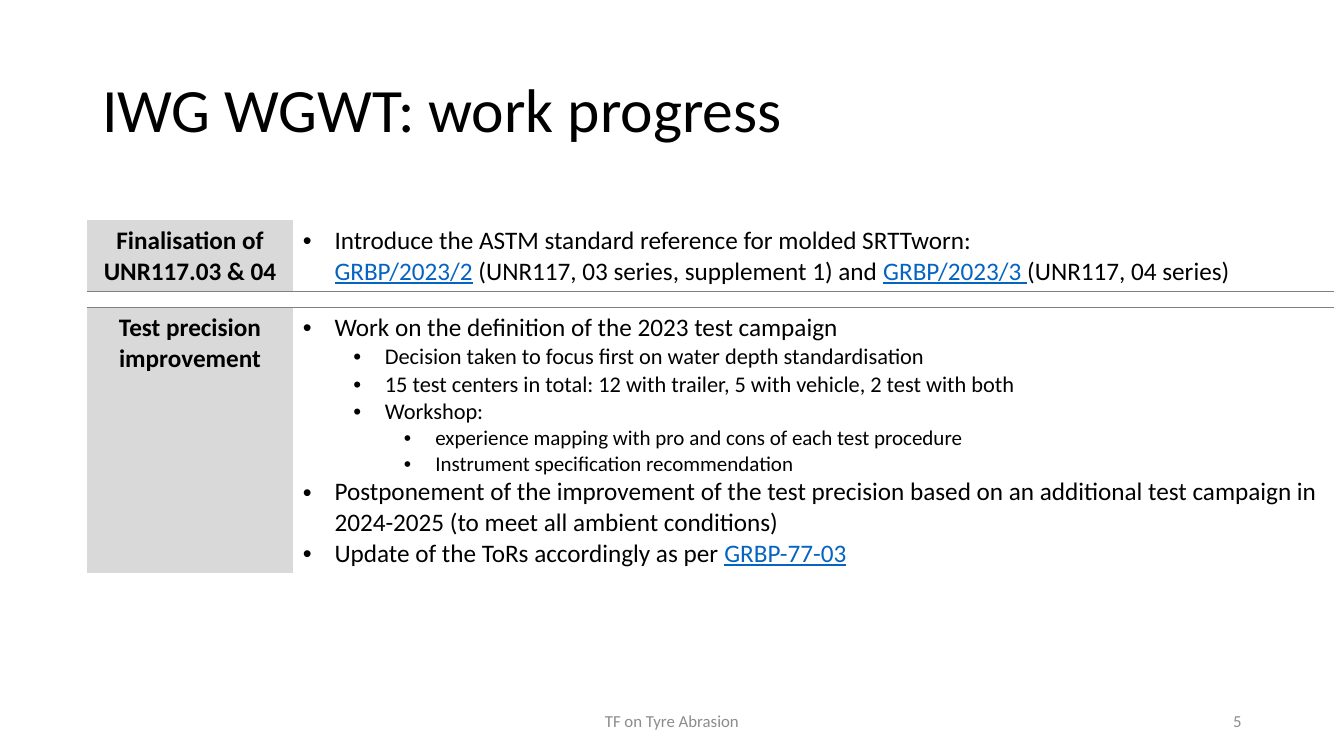
import pptx
import pptx.util
import pptx.dml.color
import pptx.enum.text
import pptx.oxml
import pptx.oxml.ns

FONT = "Calibri"
BLACK, GRAY, LINK = "000000", "8C8C8C", "0563C1"
PANEL, RULE = "D9D9D9", "808080"
ALIGN = pptx.enum.text.PP_ALIGN
MID = pptx.enum.text.MSO_ANCHOR.MIDDLE
PLAIN = "{2D5ABB26-0587-4C30-8999-92F81FD0307C}"
SIZES = [18, 16, 15]
INDENT, STEP = 30, 48

FINAL = [
    (0, ["Introduce the ASTM standard reference for molded SRTTworn: ", "\n",
         ("GRBP/2023/2",), " (UNR117, 03 series, supplement 1) and ",
         ("GRBP/2023/3 ",), "(UNR117, 04 series)"]),
]
TESTS = [
    (0, ["Work on the definition of the 2023 test campaign"]),
    (1, ["Decision taken to focus first on water depth standardisation"]),
    (1, ["15 test centers in total: 12 with trailer, 5 with vehicle, 2 test with both"]),
    (1, ["Workshop:"]),
    (2, ["experience mapping with pro and cons of each test procedure"]),
    (2, ["Instrument specification recommendation"]),
    (0, ["Postponement of the improvement of the test precision based on an "
         "additional test campaign in 2024-2025 (to meet all ambient conditions)"]),
    (0, ["Update of the ToRs accordingly as per ", ("GRBP-77-03",)]),
]


def px(n):
    return pptx.util.Emu(n * 9525)


def color(code):
    return pptx.dml.color.RGBColor.from_string(code)


def node(xml):
    space = pptx.oxml.ns.nsdecls("a")
    return pptx.oxml.parse_xml(xml.replace(" ", f" {space} ", 1))


def write(para, text, size, ink=BLACK, bold=False, line=False):
    run = para.add_run()
    run.text = text
    font = run.font
    font.name = FONT
    font.size = pptx.util.Pt(size)
    font.color.rgb = color(ink)
    font.bold = bold
    font.underline = line


def label(slide, box, text, size, ink, align):
    frame = slide.shapes.add_textbox(*map(px, box)).text_frame
    frame.word_wrap = True
    frame.vertical_anchor = MID
    para = frame.paragraphs[0]
    para.alignment = align
    write(para, text, size, ink)
    return para


def bullet(para, level, parts):
    para.level = level
    props = para._p.get_or_add_pPr()
    props.set("marL", str(px(INDENT + STEP * level)))
    props.set("indent", str(px(-INDENT)))
    props.append(node('<a:buFont typeface="Arial"/>'))
    props.append(node('<a:buChar char="•"/>'))
    for part in parts:
        if part == "\n":
            para.add_line_break()
        elif isinstance(part, tuple):
            write(para, part[0], SIZES[level], LINK, line=True)
        else:
            write(para, part, SIZES[level])


def border(cell, side):
    cell._tc.get_or_add_tcPr().insert(0, node(
        f'<a:{side} w="12700"><a:solidFill><a:srgbClr val="{RULE}"/>'
        f'</a:solidFill></a:{side}>'))


def topic(head, body, name, items):
    head.fill.solid()
    head.fill.fore_color.rgb = color(PANEL)
    para = head.text_frame.paragraphs[0]
    para.alignment = ALIGN.CENTER
    write(para, name, 18, bold=True)
    body.fill.background()
    frame = body.text_frame
    for i, (level, parts) in enumerate(items):
        para = frame.add_paragraph() if i else frame.paragraphs[0]
        bullet(para, level, parts)


def spacer(cell):
    cell.fill.background()
    cell.margin_top = cell.margin_bottom = 0
    cell.text_frame.paragraphs[0]._p.append(node('<a:endParaRPr sz="400"/>'))


def grid(slide):
    cols, rows = [196, 992], [68, 15, 253]
    frame = slide.shapes.add_table(
        3, 2, px(83), px(210), px(sum(cols)), px(sum(rows)))
    table = frame.table
    table.first_row = table.horz_banding = False
    table._tbl.tblPr.find(pptx.oxml.ns.qn("a:tableStyleId")).text = PLAIN
    for col, wide in zip(table.columns, cols):
        col.width = px(wide)
    for row, high in zip(table.rows, rows):
        row.height = px(high)
    topic(table.cell(0, 0), table.cell(0, 1),
          "Finalisation of UNR117.03 & 04", FINAL)
    topic(table.cell(2, 0), table.cell(2, 1),
          "Test precision improvement", TESTS)
    for c in range(2):
        spacer(table.cell(1, c))
        border(table.cell(0, c), "lnB")
        border(table.cell(1, c), "lnT")


def main():
    deck = pptx.Presentation()
    deck.slide_width, deck.slide_height = px(1280), px(720)
    slide = deck.slides.add_slide(deck.slide_layouts[6])
    title = label(slide, (88, 38, 1104, 139), "IWG WGWT: work progress",
                  44, BLACK, ALIGN.LEFT)
    title.line_spacing = 0.9
    grid(slide)
    label(slide, (424, 667, 432, 38), "TF on Tyre Abrasion",
          12, GRAY, ALIGN.CENTER)
    label(slide, (904, 667, 288, 38), "5", 12, GRAY, ALIGN.RIGHT)
    deck.save("out.pptx")


if __name__ == "__main__":
    main()
